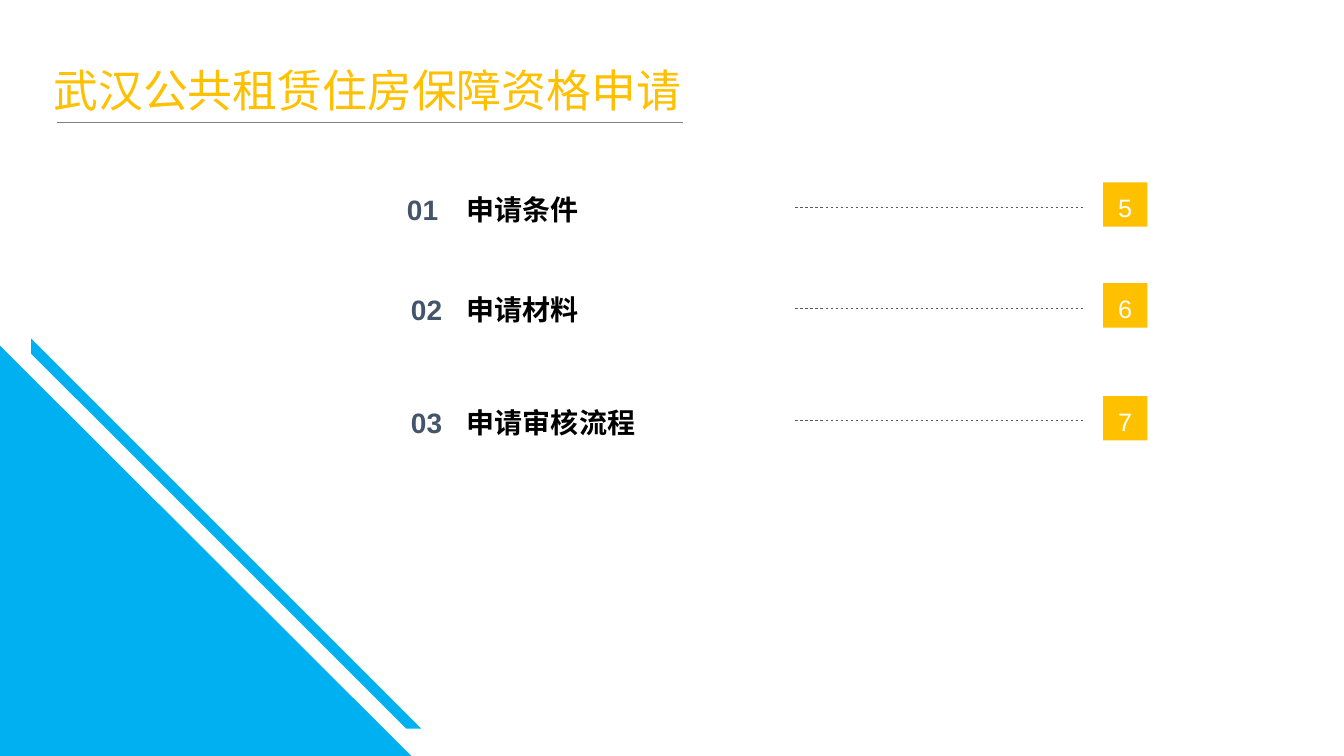
from lxml import etree
from pptx import Presentation
from pptx.dml.color import RGBColor
from pptx.enum.dml import MSO_LINE_DASH_STYLE as Dash
from pptx.enum.shapes import MSO_CONNECTOR as Connector, MSO_SHAPE as Shape
from pptx.enum.text import MSO_ANCHOR as Anchor, MSO_AUTO_SIZE as AutoSize, PP_ALIGN as Align
from pptx.oxml.ns import qn
from pptx.util import Inches, Pt

AMBER = RGBColor(0xFF, 0xC0, 0x00)
SKY = RGBColor(0x00, 0xB0, 0xF0)
SLATE = RGBColor(0x44, 0x54, 0x6A)
BLACK = RGBColor(0x00, 0x00, 0x00)
WHITE = RGBColor(0xFF, 0xFF, 0xFF)
DARK_GRAY = RGBColor(0x59, 0x59, 0x59)
GRAY = RGBColor(0x80, 0x80, 0x80)

# Columns of the contents list: left and width in inches
NUMBER_COL = (4.02, 0.42)
HEADING_COL = (4.63, 3.25)
LEADER_COL = (7.89, 2.87)
PAGE_COL = (10.94, 0.44)
ROW_HEIGHT = 0.44

# Row top, number, heading, page
ENTRIES = [
    (1.82, "01 ", "申请条件", "5"),
    (2.82, "02", "申请材料", "6"),
    (3.94, "03", "申请审核流程", "7"),
]

TITLE_FONT = {"name": "Arial", "size": Pt(32), "bold": False}
HEADING_FONT = {"name": "Arial", "size": Pt(20), "bold": True}
PAGE_FONT = {"name": "Arial", "size": Pt(18), "bold": False}
CELL_FRAME = {"word_wrap": True, "vertical_anchor": Anchor.MIDDLE, "margin_left": 0,
              "margin_right": 0, "margin_top": 0, "margin_bottom": 0}
TITLE_FRAME = {"word_wrap": True, "vertical_anchor": Anchor.TOP,
               "auto_size": AutoSize.SHAPE_TO_FIT_TEXT}


def apply_format(target, values):
    for attribute, value in values.items():
        setattr(target, attribute, value)


def write_text(holder, text, frame_format, font_format, color, align, spacing):
    frame = holder.text_frame
    apply_format(frame, frame_format)
    paragraph = frame.paragraphs[0]
    apply_format(paragraph, {"alignment": align, "line_spacing": spacing})
    run = paragraph.add_run()
    run.text = text
    apply_format(run.font, font_format)
    run.font.color.rgb = color


def cell_box(column, top):
    left, width = column
    return [Inches(value) for value in (left, top, width, ROW_HEIGHT)]


def add_label(slide, column, top, text, color, align):
    label = slide.shapes.add_textbox(*cell_box(column, top))
    write_text(label, text, CELL_FRAME, HEADING_FONT, color, align, 1.2)


def add_page_tile(slide, top, page):
    tile = slide.shapes.add_shape(Shape.RECTANGLE, *cell_box(PAGE_COL, top))
    fill_flat(tile, AMBER)
    write_text(tile, page, CELL_FRAME, PAGE_FONT, WHITE, Align.CENTER, 1.2)


def fill_flat(shape, color):
    shape.shadow.inherit = False
    shape.fill.solid()
    shape.fill.fore_color.rgb = color
    shape.line.fill.background()


def add_rule(slide, left, width, y, color, dash=None):
    rule = slide.shapes.add_connector(Connector.STRAIGHT, Inches(left), Inches(y),
                                      Inches(left + width), Inches(y))
    apply_format(rule.line, {"width": Pt(0.5), "dash_style": dash})
    rule.line.color.rgb = color
    etree.SubElement(rule._element.spPr, qn("a:effectLst"))


def add_corner(slide):
    triangle = [(0, 3.43), (4.08, 7.5), (0, 7.5)]
    stripe = [(0.31, 3.36), (4.18, 7.23), (4.03, 7.23), (0.31, 3.51)]
    outlines = [[(Inches(x), Inches(y)) for x, y in part] for part in (triangle, stripe)]
    builder = slide.shapes.build_freeform(*outlines[0][0])
    for outline in outlines:
        builder.move_to(*outline[0])
        builder.add_line_segments(outline[1:], close=True)
    fill_flat(builder.convert_to_shape(), SKY)


def add_title(slide, text):
    title = slide.shapes.title
    apply_format(title, {"left": Inches(0.43), "top": Inches(0.57),
                         "width": Inches(7.46), "height": Inches(0.64)})
    write_text(title, text, TITLE_FRAME, TITLE_FONT, AMBER, Align.LEFT, 1.0)
    add_rule(slide, 0.57, 6.2, 1.21, GRAY)


def add_entry(slide, top, number, heading, page):
    add_label(slide, NUMBER_COL, top, number, SLATE, Align.CENTER)
    add_label(slide, HEADING_COL, top, heading, BLACK, Align.LEFT)
    add_rule(slide, *LEADER_COL, top + 0.235, DARK_GRAY, Dash.DASH)
    add_page_tile(slide, top - 0.01, page)


def main():
    deck = Presentation()
    apply_format(deck, {"slide_width": Inches(13.33), "slide_height": Inches(7.5)})
    slide = deck.slides.add_slide(deck.slide_layouts[5])

    # Heading and corner decoration
    add_title(slide, "武汉公共租赁住房保障资格申请")
    add_corner(slide)

    # Contents list
    for entry in ENTRIES:
        add_entry(slide, *entry)

    deck.save("out.pptx")


if __name__ == "__main__":
    main()
